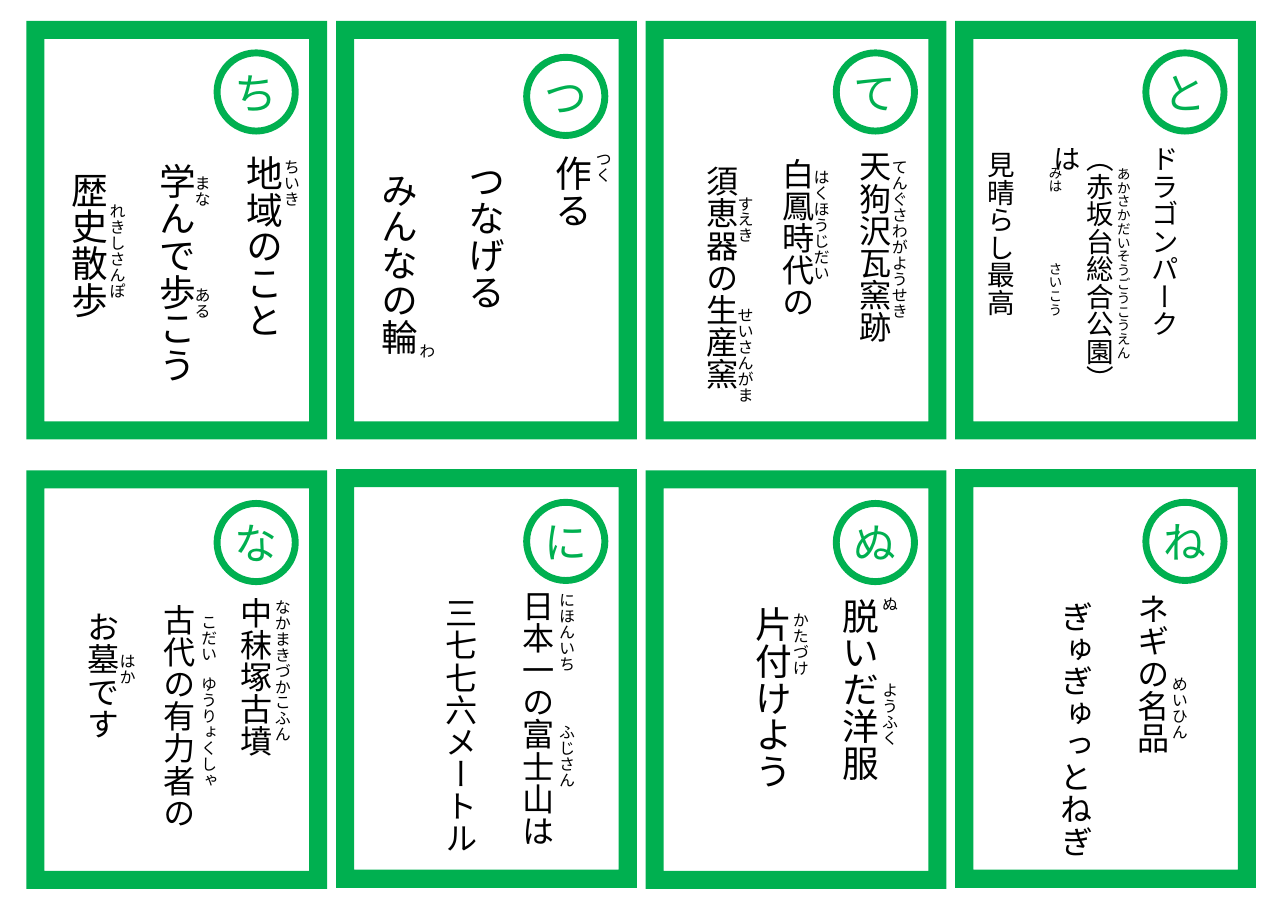
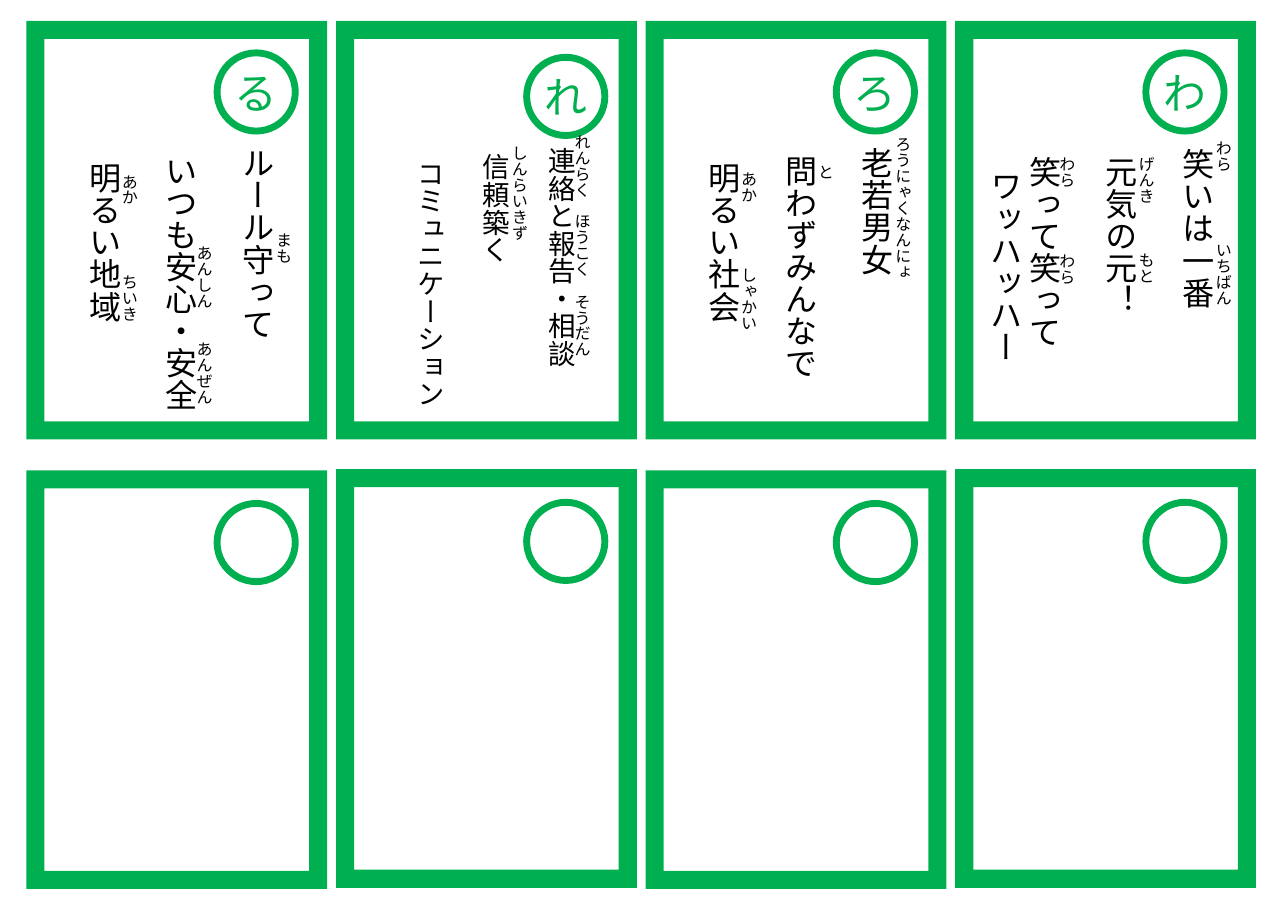
"""Build two sheets of green-framed reading cards with vertical Japanese verses."""
from lxml.etree import SubElement
from pptx import Presentation
from pptx.dml.color import RGBColor
from pptx.enum.shapes import MSO_SHAPE as SHAPE
from pptx.enum.text import MSO_ANCHOR as ANCHOR, MSO_AUTO_SIZE as AUTO, PP_ALIGN as ALIGN
from pptx.oxml.ns import qn
from pptx.util import Inches, Pt

FONT = "Noto Sans CJK JP"
COLORS = {"green": "00B050", "white": "FFFFFF", "black": "000000"}

CARD_W, CARD_H, CARD_LEFT, CARD_PITCH = 2.73, 3.8, 0.24, 2.81
CARD_TOPS = ((0.19, 0.19, 0.19, 0.19), (4.27, 4.26, 4.27, 4.26))
BADGE_TOPS = ((0.48, 0.52, 0.48, 0.48), (4.57, 4.56, 4.57, 4.56))
BADGE_SIZE, BADGE_DX = 0.71, 1.73
LINE_EM, STEP_EM = 1.18, 0.23
READING_W, READING_SIZE, SMALL_READING = 0.38, 10.5, 9
READING_INSET, READING_SLACK = 0.1, 0.3

# Verse: box, size, lines as (text, indent steps, blank column before)
SHEETS = [
    {
        "badges": "ちつてとなにぬね",
        "verses": [
            ((-0.11, 1.31, 2.75, 3.36), 24,
             [("地域のこと", 0, 0), ("学んで歩こう", 1, 1), ("歴史散歩", 2, 1)]),
            ((2.88, 1.31, 2.57, 2.11), 24,
             [("作る", 0, 0), ("つなげる", 1, 1), ("みんなの輪", 2, 1)]),
            ((6.01, 1.27, 2.15, 2.76), 21,
             [("天狗沢瓦窯跡", 0, 0), ("白鳳時代の", 1, 1), ("須恵器の生産窯", 2, 1)]),
            ((8.09, 1.22, 2.68, 2.55), 18,
             [("ドラゴンパーク", 0, 0), ("（赤坂台総合公園）は", 0, 1), ("見晴らし最高", 1, 1)]),
            ((0.22, 5.32, 2.32, 2.76), 21,
             [("中秣塚古墳", 0, 0), ("古代の有力者の", 1, 1), ("お墓です", 2, 1)]),
            ((3.31, 5.26, 1.79, 2.76), 21,
             [("日本一の富士山は", 0, 0), ("三七七六メートル", 1, 1)]),
            ((6.11, 5.33, 1.94, 2.76), 24,
             [("脱いだ洋服", 0, 0), ("片付けよう", 1, 1)]),
            ((8.89, 5.29, 1.79, 2.76), 21,
             [("ネギの名品", 0, 0), ("ぎゅぎゅっとねぎ", 1, 1)]),
        ],
        "readings": [
            (2.4, [("ちいき", 1.45)]),
            (1.59, [("まな", 1.59), ("ある", 2.61)]),
            (0.82, [("れきしさんぽ", 1.85)]),
            (5.23, [("つく", 1.38)]),
            (3.63, [("わ", 3.12)]),
            (7.92, [("てんぐさわがようせき", 1.45)]),
            (7.21, [("はくほうじだい", 1.54)]),
            (6.52, [("すえき", 1.78), ("せいさんがま", 2.79)]),
            (2.32, [("なかまきづかこふん", 5.44)]),
            (1.65, [("こだい", 5.58), ("ゆうりょくしゃ", 6.14)]),
            (0.91, [("はか", 5.93)]),
            (4.9, [("にほんいち", 5.38), ("ふじさん", 6.58)]),
            (7.83, [("ぬ", 5.42), ("ようふく", 6.2)]),
            (7.02, [("かたづけ", 5.56)]),
            (10.46, [("めいひん", 6.14)]),
        ],
        "small_readings": [
            (9.94, [("あかさかだいそうごうこうえん", 1.52)]),
            (9.32, [("みは", 1.51), ("さいこう", 2.38)]),
        ],
    },
    {
        "badges": "るれろわ",
        "verses": [
            ((0.24, 1.24, 2.32, 2.75), 21,
             [("ルール守って", 0, 0), ("いつも安心・安全", 1, 1), ("明るい地域", 2, 1)]),
            ((3.22, 1.24, 2.07, 3.33), 18,
             [("連絡と報告・相談", 0, 0), ("信頼築く", 1, 1), ("コミュニケーション", 2, 1)]),
            ((5.86, 1.24, 2.32, 2.59), 21,
             [("老若男女", 0, 0), ("問わずみんなで", 1, 1), ("明るい社会", 2, 1)]),
            ((8.59, 1.25, 2.5, 2.76), 21,
             [("笑いは一番", 0, 0), ("元気の元！", 1, 1), ("笑って笑って", 1, 1),
              ("ワッハッハー", 3, 0)]),
        ],
        "readings": [
            (2.33, [("まも", 2.11)]),
            (1.61, [("あんしん", 2.23), ("あんぜん", 3.1)]),
            (0.93, [("あか", 1.58), ("ちいき", 2.49)]),
            (5.04, [("れんらく", 1.22), ("ほうこく", 1.94), ("そうだん", 2.67)]),
            (4.47, [("しんらいきず", 1.32)]),
            (7.95, [("ろうにゃくなんにょ", 1.24)]),
            (7.25, [("と", 1.49)]),
            (6.55, [("あか", 1.56), ("しゃかい", 2.43)]),
            (10.86, [("わら", 1.28), ("いちばん", 2.2)]),
            (10.16, [("げんき", 1.42), ("もと", 2.29)]),
            (9.44, [("わら", 1.42), ("わら", 2.3)]),
        ],
        "small_readings": [],
    },
]


def rgb(name):
    return RGBColor.from_string(COLORS[name])


def write(p, text, size, color="black", align=None, steps=0, gap=0):
    r = p.add_run()
    r.text = text
    r.font.size = Pt(size)
    r.font.color.rgb = rgb(color)
    r.font.name = FONT
    SubElement(r._r.get_or_add_rPr(), qn("a:ea")).set("typeface", FONT)
    if align is not None:
        p.alignment = align
    if steps:
        pPr = p._p.get_or_add_pPr()
        pPr.set("marL", str(int(Pt(size * STEP_EM * steps))))
        pPr.set("indent", "0")
    if gap:
        p.space_before = Pt(round(size * LINE_EM * gap, 1))


def add_vertical(slide, box, size, lines):
    sp = slide.shapes.add_textbox(*map(Inches, box))
    tf = sp.text_frame
    tf.word_wrap = True
    tf.auto_size = AUTO.SHAPE_TO_FIT_TEXT
    sp.element.txBody.bodyPr.set("vert", "eaVert")
    for i, (text, steps, gap) in enumerate(lines):
        p = tf.add_paragraph() if i else tf.paragraphs[0]
        write(p, text, size, steps=steps, gap=gap)


def add_plain(slide, shape, fill, *box):
    sp = slide.shapes.add_shape(shape, *map(Inches, box))
    sp.shadow.inherit = False
    sp.fill.solid()
    sp.fill.fore_color.rgb = rgb(fill)
    sp.line.fill.background()
    return sp


def add_card(slide, index, kana):
    row, col = divmod(index, 4)
    left = CARD_LEFT + CARD_PITCH * col
    frame = add_plain(slide, SHAPE.FRAME, "green", left, CARD_TOPS[row][col], CARD_W, CARD_H)
    frame.adjustments[0] = 0.06
    badge = add_plain(slide, SHAPE.OVAL, "white", left + BADGE_DX, BADGE_TOPS[row][col],
                      BADGE_SIZE, BADGE_SIZE)
    badge.line.color.rgb = rgb("green")
    badge.line.width = Pt(4.5)
    if kana:
        tf = badge.text_frame
        tf.margin_left = tf.margin_right = tf.margin_top = tf.margin_bottom = 0
        tf.vertical_anchor = ANCHOR.MIDDLE
        write(tf.paragraphs[0], kana, 28, color="green", align=ALIGN.CENTER)


def add_readings(slide, columns, size):
    for left, readings in columns:
        for text, top in readings:
            height = len(text) * size / 72 + READING_SLACK
            box = (left, top - READING_INSET, READING_W, height)
            add_vertical(slide, box, size, [(text, 0, 0)])


def main():
    prs = Presentation()
    prs.slide_width, prs.slide_height = Inches(11.69), Inches(8.27)
    for sheet in SHEETS:
        slide = prs.slides.add_slide(prs.slide_layouts[6])
        for i in range(8):
            add_card(slide, i, sheet["badges"][i:i + 1])
        for box, size, lines in sheet["verses"]:
            add_vertical(slide, box, size, lines)
        add_readings(slide, sheet["readings"], READING_SIZE)
        add_readings(slide, sheet["small_readings"], SMALL_READING)
    prs.save("out.pptx")


if __name__ == "__main__":
    main()
